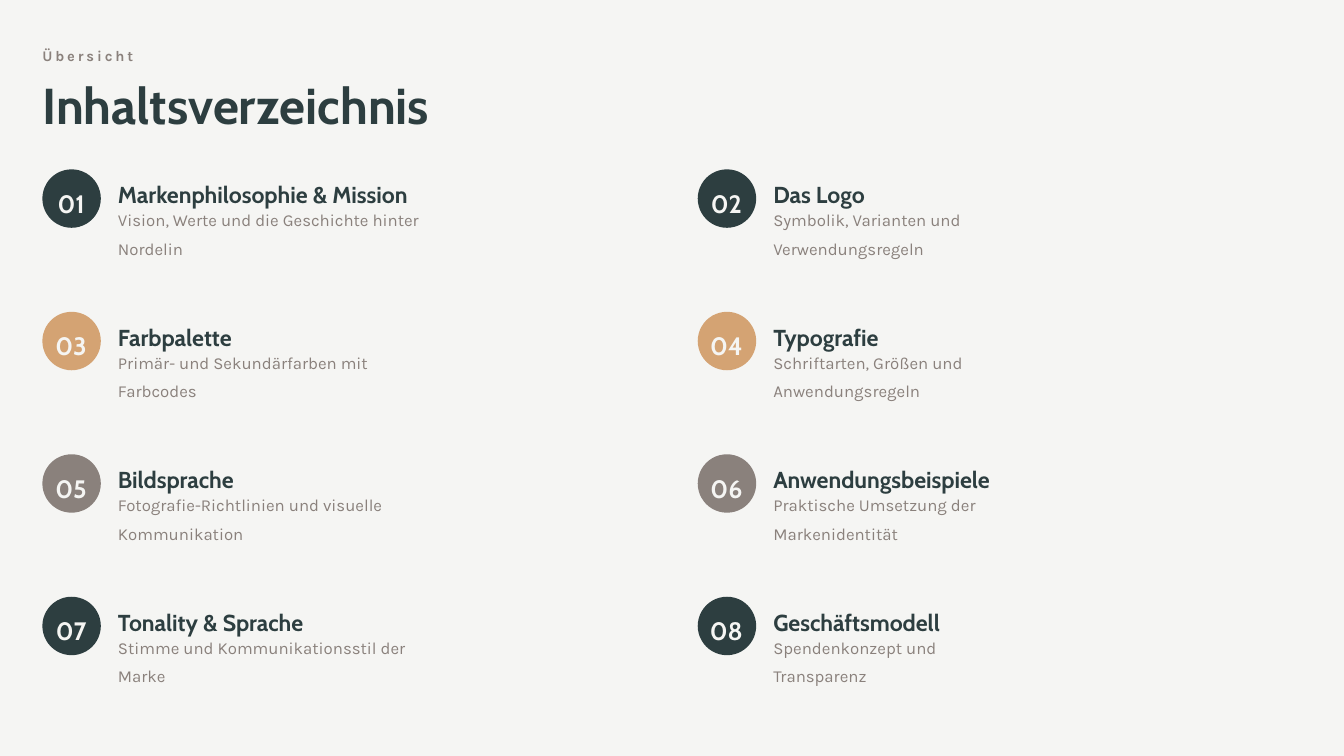
from pptx import Presentation
from pptx.dml.color import RGBColor
from pptx.enum.shapes import MSO_SHAPE
from pptx.enum.text import MSO_ANCHOR, PP_ALIGN
from pptx.util import Inches, Pt

COLORS = {
    "paper": "F5F5F3",
    "petrol": "2D3E40",
    "sand": "D4A373",
    "taupe": "8A817C",
}

CHAPTERS = [
    ("Markenphilosophie & Mission", "Vision, Werte und die Geschichte hinter Nordelin", 3.61),
    ("Das Logo", "Symbolik, Varianten und Verwendungsregeln", 3.33),
    ("Farbpalette", "Primär- und Sekundärfarben mit Farbcodes", 3.2),
    ("Typografie", "Schriftarten, Größen und Anwendungsregeln", 3.29),
    ("Bildsprache", "Fotografie-Richtlinien und visuelle Kommunikation", 3.71),
    ("Anwendungsbeispiele", "Praktische Umsetzung der Markenidentität", 3.11),
    ("Tonality & Sprache", "Stimme und Kommunikationsstil der Marke", 3.18),
    ("Geschäftsmodell", "Spendenkonzept und Transparenz", 2.53),
]
ROW_COLORS = ["petrol", "sand", "taupe", "petrol"]

LEFT, TOP = 0.42, 1.68
COLUMN_STEP = 6.5
ROW_STEP = (5.92 - TOP) / 3
CIRCLE = 0.58

prs = Presentation()
prs.slide_width, prs.slide_height = Inches(13.33), Inches(7.5)
s = prs.slides.add_slide(prs.slide_layouts[6])
s.background.fill.solid()
s.background.fill.fore_color.rgb = RGBColor.from_string(COLORS["paper"])


def add_text(text, x, y, w, h, font, size, color, bold=True, spacing=1.3, align=PP_ALIGN.LEFT):
    tf = s.shapes.add_textbox(Inches(x), Inches(y), Inches(w), Inches(h)).text_frame
    tf.word_wrap = True
    tf.vertical_anchor = MSO_ANCHOR.MIDDLE
    tf.margin_left = tf.margin_right = tf.margin_top = tf.margin_bottom = 0
    p = tf.paragraphs[0]
    p.text = text
    p.alignment = align
    p.line_spacing = spacing
    r = p.runs[0]
    r.font.name = font
    r.font.size = Pt(size)
    r.font.bold = bold
    r.font.color.rgb = RGBColor.from_string(COLORS[color])
    return r


overline = add_text("Übersicht", LEFT, 0.42, 12.57, 0.22, "Karla", 10.5, "taupe")
overline.font._element.set("spc", "210")
add_text("Inhaltsverzeichnis", LEFT, 0.72, 12.75, 0.62, "Cabin", 36, "petrol", spacing=1.0)

for i, (title, description, width) in enumerate(CHAPTERS):
    row, column = divmod(i, 2)
    x = LEFT + column * COLUMN_STEP
    y = TOP + row * ROW_STEP

    sp = s.shapes.add_shape(MSO_SHAPE.OVAL, Inches(x), Inches(y), Inches(CIRCLE), Inches(CIRCLE))
    sp.shadow.inherit = False
    sp.fill.solid()
    sp.fill.fore_color.rgb = RGBColor.from_string(COLORS[ROW_COLORS[row]])
    sp.line.fill.background()

    add_text(f"{i + 1:02d}", x - 0.07, y, 0.71, CIRCLE, "Cabin", 18, "paper", align=PP_ALIGN.CENTER)
    add_text(title, x + 0.75, y + 0.04, width + 0.03, 0.34, "Cabin", 16.5, "petrol")
    add_text(description, x + 0.75, y + 0.47, width, 0.27, "Karla", 12, "taupe", bold=False, spacing=1.4)

prs.save("out.pptx")
